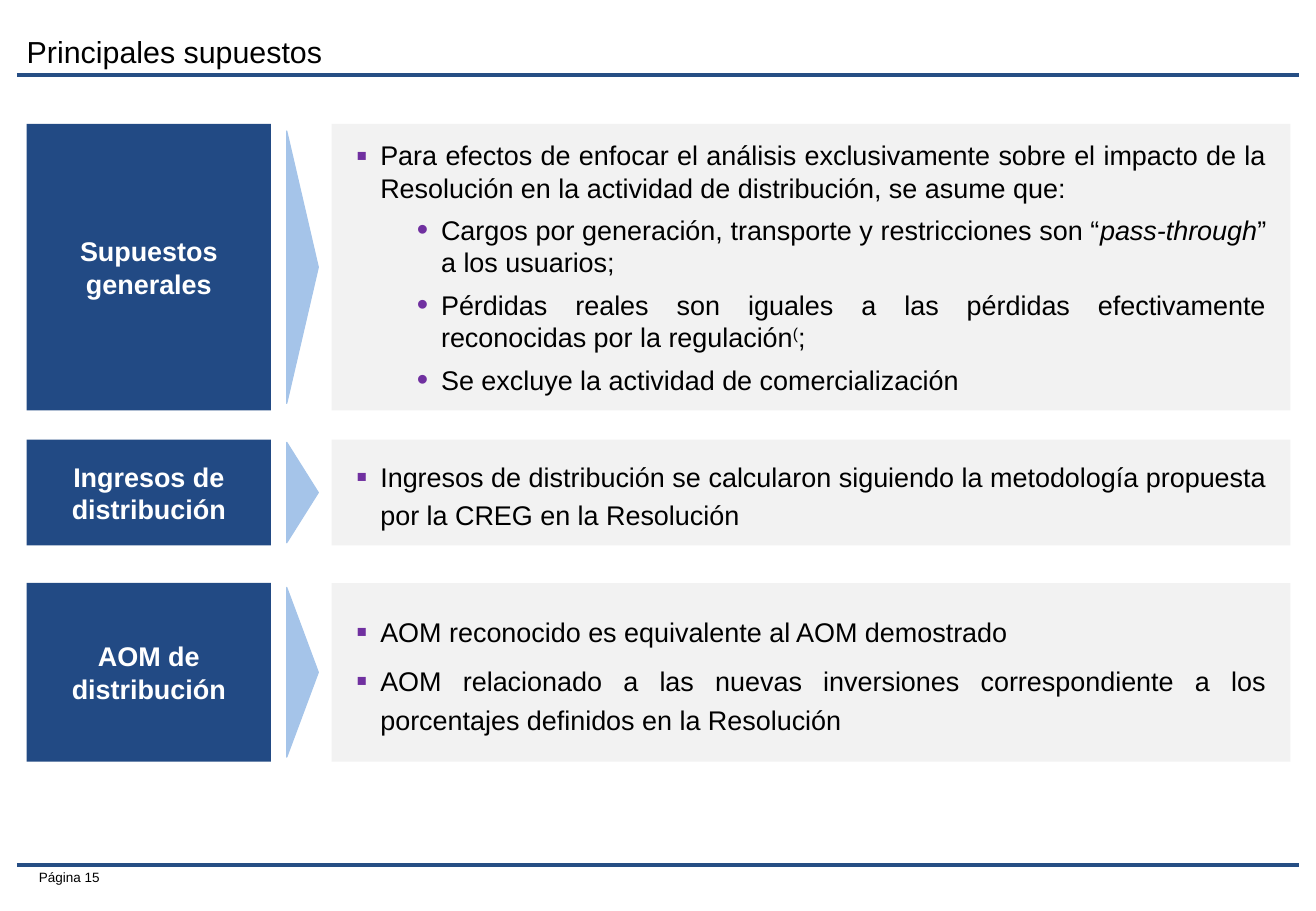
from lxml.etree import SubElement
from pptx import Presentation
from pptx.dml.color import RGBColor
from pptx.enum.shapes import MSO_CONNECTOR, MSO_SHAPE
from pptx.enum.text import MSO_ANCHOR as ANCHOR, MSO_AUTO_SIZE as AUTO, PP_ALIGN as ALIGN
from pptx.oxml.ns import qn
from pptx.util import Inches, Pt

BLACK = RGBColor(0, 0, 0)
WHITE = RGBColor(255, 255, 255)
NAVY = RGBColor(0x22, 0x4A, 0x84)
RULE_BLUE = RGBColor(0x26, 0x4E, 0x84)
LIGHT_BLUE = RGBColor(0xA5, 0xC4, 0xE9)
PANEL_GRAY = RGBColor(0xF2, 0xF2, 0xF2)
PURPLE = RGBColor(0x70, 0x30, 0xA0)

LEFT, LABEL_W = 0.22, 2.01
PANEL_X, PANEL_W = 2.73, 7.89
ARROW_CENTER, ARROW_DEPTH, ARROW_RATIO = 2.49, 0.26, 0.95

# Each row: placeholder index, top, height, line spacing, label, bullets.
# Each bullet: level, then its pieces of text as (text, style).
ROWS = [
    (1, 1.02, 2.36, 1.0, "Supuestos generales", [
        (0, [("Para efectos de enfocar el análisis exclusivamente sobre el impacto "
              "de la Resolución en la actividad de distribución, se asume que:", None)]),
        (1, [("Cargos por generación, transporte y restricciones son “", None),
             ("pass-through", "italic"), ("” a los usuarios;", None)]),
        (1, [("Pérdidas reales son iguales a las pérdidas efectivamente "
              "reconocidas por la regulación", None), ("(", "super"), (";", None)]),
        (1, [("Se excluye la actividad de comercialización", None)]),
    ]),
    (2, 3.62, 0.87, 1.2, "Ingresos de distribución", [
        (0, [("Ingresos de distribución se calcularon siguiendo la metodología "
              "propuesta por la CREG en la Resolución", None)]),
    ]),
    (4, 4.8, 1.47, 1.2, "AOM de distribución", [
        (0, [("AOM reconocido es equivalente al AOM demostrado", None)]),
        (0, [("AOM relacionado a las nuevas inversiones correspondiente a los "
              "porcentajes definidos en la Resolución", None)]),
    ]),
]


class SlideBuilder:
    font = "Arial"
    body_size = 16

    def __init__(self, slide):
        self.s = slide

    def place(self, sp, x, y, w, h):
        sp.left, sp.top = Inches(x), Inches(y)
        sp.width, sp.height = Inches(w), Inches(h)

    def frame(self, sp, inset_x, inset_y, anchor=ANCHOR.MIDDLE, wrap=True):
        tf = sp.text_frame
        tf.auto_size = AUTO.NONE
        tf.word_wrap = wrap
        tf.vertical_anchor = anchor
        tf.margin_left = tf.margin_right = Inches(inset_x)
        tf.margin_top = tf.margin_bottom = Inches(inset_y)
        return tf

    def style(self, p, size, color=BLACK, bold=False, align=ALIGN.LEFT):
        p.alignment = align
        for r in p.runs:
            r.font.name, r.font.size = self.font, Pt(size)
            r.font.color.rgb, r.font.bold = color, bold

    def title(self, text, x, y, w, h):
        sp = self.s.shapes.title
        self.place(sp, x, y, w, h)
        tf = self.frame(sp, 0, 0.04, ANCHOR.TOP)
        tf.text = text
        p = tf.paragraphs[0]
        p.line_spacing = 0.8
        self.style(p, 18)

    def rule(self, y):
        line = self.s.shapes.add_connector(
            MSO_CONNECTOR.STRAIGHT, Inches(0.14), Inches(y), Inches(10.69), Inches(y))
        line.line.color.rgb, line.line.width = RULE_BLUE, Pt(2.25)
        SubElement(line._element.spPr, qn("a:effectLst"))

    def page_number(self, text, x, y, w, h):
        sp = self.s.shapes.add_textbox(Inches(x), Inches(y), Inches(w), Inches(h))
        tf = self.frame(sp, 0.1, 0.05, wrap=False)
        tf.text = text
        self.style(tf.paragraphs[0], 8, align=ALIGN.RIGHT)

    def shape(self, kind, x, y, w, h, fill):
        sp = self.s.shapes.add_shape(kind, Inches(x), Inches(y), Inches(w), Inches(h))
        sp.shadow.inherit = False
        sp.fill.solid()
        sp.fill.fore_color.rgb = fill
        sp.line.fill.background()
        return sp

    def label(self, text, y, h):
        sp = self.shape(MSO_SHAPE.RECTANGLE, LEFT, y, LABEL_W, h, NAVY)
        tf = self.frame(sp, 0.1, 0.1)
        tf.text = text
        self.style(tf.paragraphs[0], self.body_size, WHITE, True, ALIGN.CENTER)

    def arrow(self, y, h):
        span = h * ARROW_RATIO
        sp = self.shape(MSO_SHAPE.FLOWCHART_MERGE, ARROW_CENTER - span / 2,
                        y + (h - ARROW_DEPTH) / 2, span, ARROW_DEPTH, LIGHT_BLUE)
        sp.rotation = 270
        sp.line.color.rgb, sp.line.width = LIGHT_BLUE, Pt(0.75)

    def bullet(self, p, level):
        pPr = p._p.get_or_add_pPr()
        pPr.set("marL", str(Inches(0.7 if level else 0.2)))
        pPr.set("indent", str(Inches(-0.2)))
        SubElement(SubElement(pPr, qn("a:buClr")), qn("a:srgbClr"), val=str(PURPLE))
        SubElement(pPr, qn("a:buSzPct"), val="120000")
        SubElement(pPr, qn("a:buFont"), typeface=self.font)
        SubElement(pPr, qn("a:buChar"), char="•" if level else "▪")

    def panel(self, idx, y, h, spacing, bullets):
        sp = self.s.placeholders[idx]
        self.place(sp, PANEL_X, y, PANEL_W, h)
        sp.fill.solid()
        sp.fill.fore_color.rgb = PANEL_GRAY
        tf = self.frame(sp, 0.2, 0.12)
        for i, (level, pieces) in enumerate(bullets):
            p = tf.add_paragraph() if i else tf.paragraphs[0]
            p.level = level
            p.line_spacing = spacing
            p.space_before, p.space_after = Pt(0), Pt(6)
            self.bullet(p, level)
            for text, look in pieces:
                r = p.add_run()
                r.text = text
                if look == "italic":
                    r.font.italic = True
                elif look == "super":
                    r.font._element.set("baseline", "30000")
            self.style(p, self.body_size, align=ALIGN.JUSTIFY)

    def drop_empty_placeholders(self):
        for sp in list(self.s.placeholders):
            if not sp.text_frame.text:
                sp._element.getparent().remove(sp._element)


def main():
    prs = Presentation()
    prs.slide_width, prs.slide_height = Inches(10.83), Inches(7.5)
    comparison_layout = prs.slide_layouts[4]
    b = SlideBuilder(prs.slides.add_slide(comparison_layout))

    # Header and footer
    b.title("Principales supuestos", LEFT, 0.29, 9.16, 0.5)
    b.rule(0.62)
    b.rule(7.12)
    b.page_number("Página 15", 0.14, 7.1, 0.78, 0.24)

    # Assumption rows: label, arrow, panel
    for idx, y, h, spacing, label, bullets in ROWS:
        b.label(label, y, h)
        b.arrow(y, h)
        b.panel(idx, y, h, spacing, bullets)

    b.drop_empty_placeholders()
    prs.save("out.pptx")


if __name__ == "__main__":
    main()
